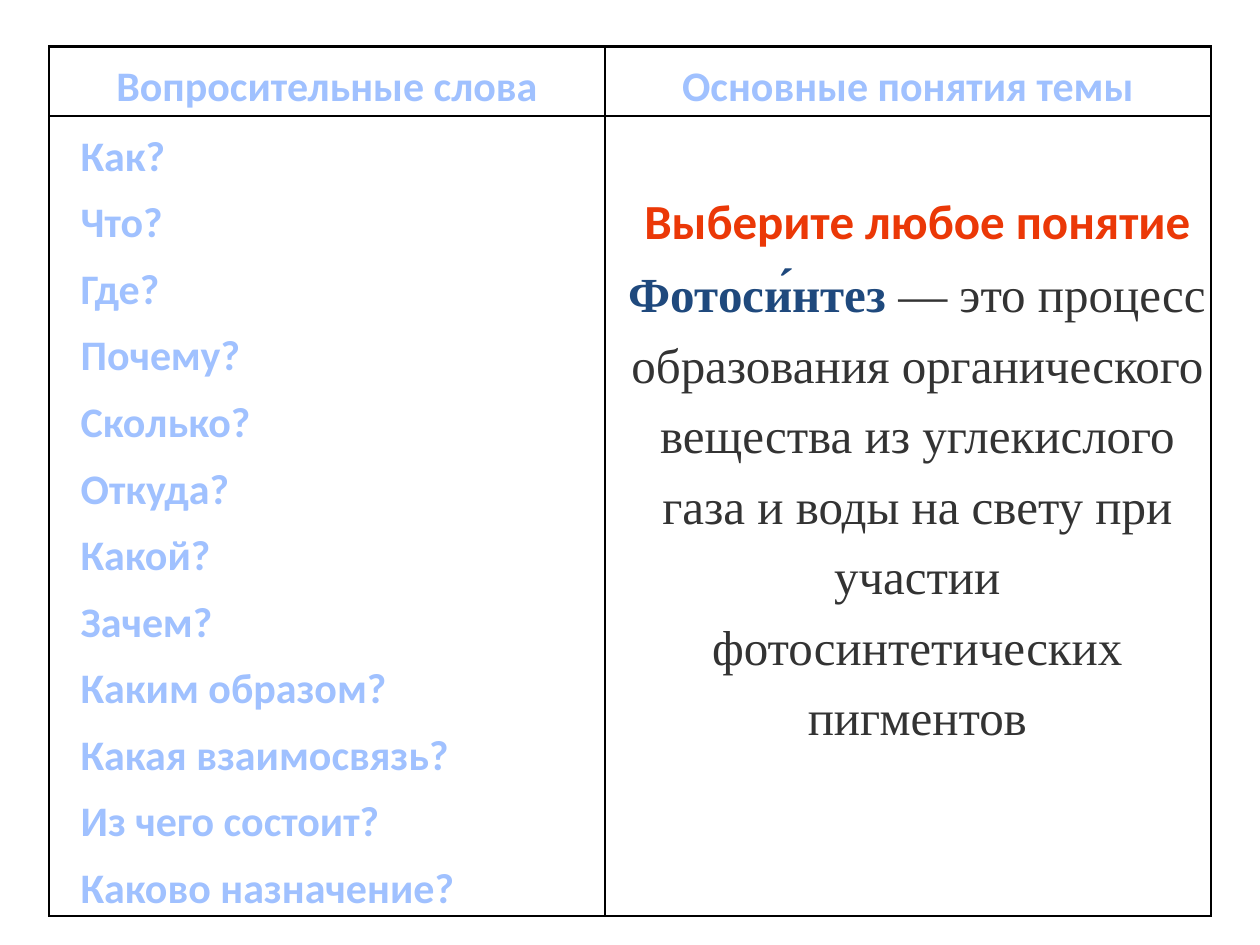
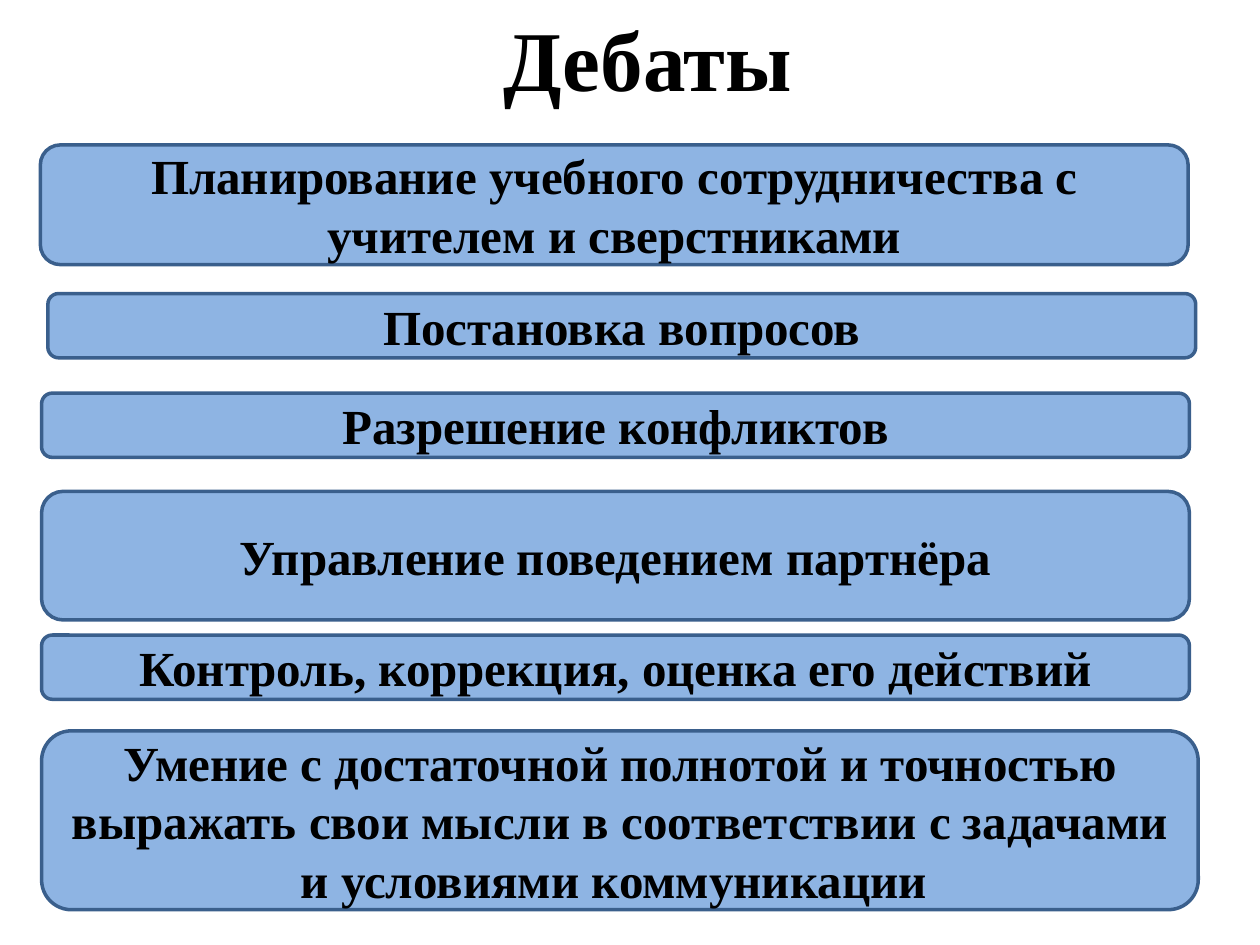
from lxml.etree import SubElement
from pptx import Presentation
from pptx.dml.color import RGBColor
from pptx.enum.shapes import MSO_SHAPE
from pptx.enum.text import MSO_ANCHOR, MSO_AUTO_SIZE, PP_ALIGN
from pptx.oxml.ns import qn
from pptx.util import Inches, Pt

COLORS = {
    "pale_blue": "A0C1FF", "orange": "EB3807", "navy": "1F497D",
    "gray": "333333", "black": "000000", "bar": "8EB4E3", "bar_line": "3A5F8C",
}
SANS, SERIF = "Calibri", "Times New Roman"

# Text formats: font, size, bold, colour
QUESTION = (SANS, 24, True, "pale_blue")
PROMPT = (SANS, 28, True, "orange")
TERM = (SERIF, 28, True, "navy")
DEFINITION = (SERIF, 28, False, "gray")
TITLE = (SERIF, 48.6, True, "black")
BAR = (SERIF, 28, True, "black")

HEADERS = ["Вопросительные слова", "Основные понятия темы"]
QUESTIONS = [
    "Как?", "Что?", "Где?", "Почему?", "Сколько?", "Откуда?", "Какой?", "Зачем?",
    "Каким образом?", "Какая взаимосвязь?", "Из чего состоит?", "Каково назначение?",
]
CONCEPT = [
    [("Выберите любое понятие", PROMPT)],
    [("Фотоси́нтез ", TERM),
     ("— это процесс образования органического вещества из углекислого газа "
      "и воды на свету при участии фотосинтетических пигментов", DEFINITION)],
]
COLUMN_WIDTHS, ROW_HEIGHTS = [4.41, 4.81], [0.55, 6.35]

# Debate skills: left, top, width, height, text
SKILLS = [
    (0.32, 1.15, 9.11, 0.95, "Планирование учебного сотрудничества с учителем и сверстниками"),
    (0.38, 2.33, 9.11, 0.51, "Постановка вопросов"),
    (0.33, 3.12, 9.11, 0.51, "Разрешение конфликтов"),
    (0.33, 3.9, 9.11, 1.02, "Управление поведением партнёра"),
    (0.33, 5.04, 9.11, 0.51, "Контроль, коррекция, оценка его действий"),
    (0.33, 5.8, 9.18, 1.42, "Умение с достаточной полнотой и точностью выражать свои мысли "
                            "в соответствии с задачами и условиями коммуникации "),
]


def rgb(name):
    return RGBColor.from_string(COLORS[name])


def write(frame, paragraphs, alignment=PP_ALIGN.CENTER, indent=0, line_spacing=None):
    """Fill a text frame; each paragraph is a list of (text, format) runs."""
    for index, runs in enumerate(paragraphs):
        paragraph = frame.add_paragraph() if index else frame.paragraphs[0]
        paragraph.alignment = alignment
        if line_spacing:
            paragraph.line_spacing = line_spacing
        if indent:
            paragraph._p.get_or_add_pPr().set("marL", str(Inches(indent)))
        for text, (name, size, bold, color) in runs:
            run = paragraph.add_run()
            run.text = text
            for key, value in {"name": name, "size": Pt(size), "bold": bold}.items():
                setattr(run.font, key, value)
            run.font.color.rgb = rgb(color)


def set_borders(cell, widths):
    """Draw black cell borders; widths maps L, R, T, B to points."""
    properties = cell._tc.get_or_add_tcPr()
    for side, width in widths.items():
        line = SubElement(properties, qn(f"a:ln{side}"), w=str(Pt(width)))
        fill = SubElement(line, qn("a:solidFill"))
        SubElement(fill, qn("a:srgbClr"), val=COLORS["black"])


def add_question_slide(presentation):
    slide = presentation.slides.add_slide(presentation.slide_layouts[6])
    table = slide.shapes.add_table(
        2, 2, Inches(0.39), Inches(0.37),
        Inches(sum(COLUMN_WIDTHS)), Inches(sum(ROW_HEIGHTS))).table
    table.first_row = table.horz_banding = False
    for column, width in zip(table.columns, COLUMN_WIDTHS):
        column.width = Inches(width)
    for row, height in zip(table.rows, ROW_HEIGHTS):
        row.height = Inches(height)

    for row in range(2):
        for column in range(2):
            cell = table.cell(row, column)
            for side in ("left", "right", "top", "bottom"):
                setattr(cell, f"margin_{side}", 0)
            outer = {"L": column == 0, "R": column == 1, "T": row == 0, "B": row == 1}
            set_borders(cell, {side: 1.5 if edge else 1 for side, edge in outer.items()})
            cell.fill.background()

    for column, header in enumerate(HEADERS):
        write(table.cell(0, column).text_frame, [[(header, QUESTION)]], line_spacing=1.3)
    write(table.cell(1, 0).text_frame, [[(question, QUESTION)] for question in QUESTIONS],
          PP_ALIGN.LEFT, indent=0.25, line_spacing=1.3)
    concept_cell = table.cell(1, 1)
    concept_cell.margin_top = Inches(0.47)
    write(concept_cell.text_frame, CONCEPT, indent=0.15, line_spacing=1.3)


def add_debate_slide(presentation):
    slide = presentation.slides.add_slide(presentation.slide_layouts[5])
    title = slide.shapes.title
    place = {"left": 0.64, "top": 0, "width": 9, "height": 0.92}
    for key, value in place.items():
        setattr(title, key, Inches(value))
    title.text_frame.auto_size = MSO_AUTO_SIZE.NONE
    title.text_frame.vertical_anchor = MSO_ANCHOR.MIDDLE
    write(title.text_frame, [[("Дебаты", TITLE)]])

    for *box, text in SKILLS:
        shape = slide.shapes.add_shape(MSO_SHAPE.ROUNDED_RECTANGLE, *map(Inches, box))
        shape.shadow.inherit = False
        shape.fill.solid()
        shape.fill.fore_color.rgb = rgb("bar")
        shape.line.color.rgb = rgb("bar_line")
        shape.line.width = Pt(2)
        shape.text_frame.word_wrap = True
        shape.text_frame.vertical_anchor = MSO_ANCHOR.MIDDLE
        write(shape.text_frame, [[(text, BAR)]])


def main():
    presentation = Presentation()
    presentation.slide_width, presentation.slide_height = Inches(10), Inches(7.5)
    add_question_slide(presentation)
    add_debate_slide(presentation)
    presentation.save("out.pptx")


if __name__ == "__main__":
    main()
